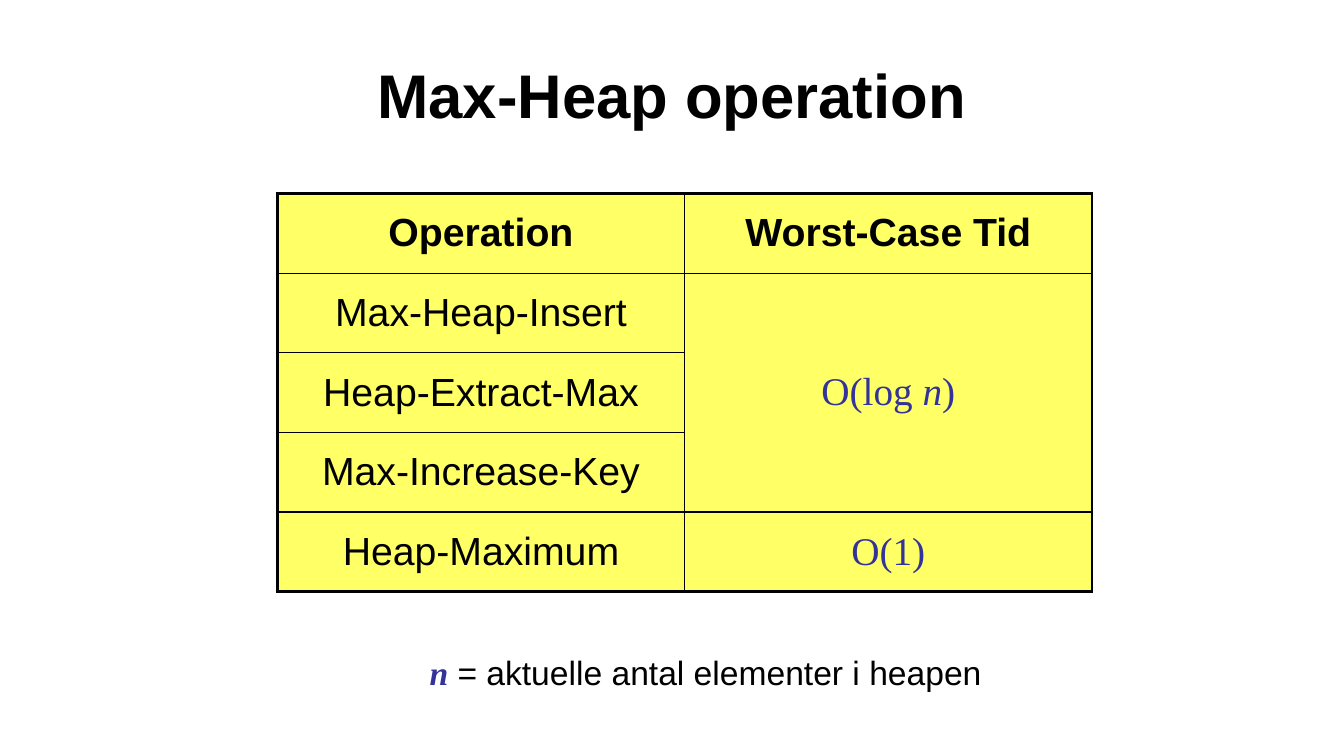
"""Build a slide tabulating the worst-case times of max-heap operations."""
from lxml.etree import SubElement
from pptx import Presentation
from pptx.dml.color import RGBColor
from pptx.enum.text import MSO_ANCHOR, PP_ALIGN
from pptx.oxml.ns import qn
from pptx.util import Inches, Pt

COLORS = {"ink": "000000", "math": "333399", "cell": "FFFF66"}
WIDTH, HEIGHT = Inches(13.33), Inches(7.5)
THIN, THICK = 1, 2.25
PLAIN = {"font": "Arial", "color": "ink"}
HEADING = {**PLAIN, "bold": True}
MATH = {"font": "Times New Roman", "color": "math"}
VARIABLE = {**MATH, "italic": True}

ROWS = [
    [[("Operation", HEADING)], [("Worst-Case Tid", HEADING)]],
    [[("Max-Heap-Insert", PLAIN)], [("O(log ", MATH), ("n", VARIABLE), (")", MATH)]],
    [[("Heap-Extract-Max", PLAIN)], []],
    [[("Max-Increase-Key", PLAIN)], []],
    [[("Heap-Maximum", PLAIN)], [("O(1)", MATH)]],
]


def write(frame, spans, size):
    para = frame.paragraphs[0]
    para.alignment = PP_ALIGN.CENTER
    for text, style in spans:
        span = para.add_run()
        span.text = text
        span.font.size = Pt(size)
        span.font.name = style["font"]
        span.font.bold = style.get("bold", False)
        span.font.italic = style.get("italic", False)
        span.font.color.rgb = RGBColor.from_string(COLORS[style["color"]])


def add_text(page, left, top, width, height, spans, size, anchor):
    box = page.shapes.add_textbox(
        int(WIDTH * left), int(HEIGHT * top), int(WIDTH * width), int(HEIGHT * height))
    box.text_frame.word_wrap = True
    box.text_frame.vertical_anchor = anchor
    write(box.text_frame, spans, size)


def set_border(cell, side, weight):
    line = SubElement(cell._tc.get_or_add_tcPr(), qn(f"a:ln{side}"), w=str(Pt(weight)))
    fill = SubElement(line, qn("a:solidFill"))
    SubElement(fill, qn("a:srgbClr"), val=COLORS["ink"])


def style_cell(cell, row, column):
    edges = {"L": column == 0, "R": column == 1}
    if not cell.is_spanned:
        edges |= {"T": row == 0, "B": row == len(ROWS) - 1}
    for side, outer in edges.items():
        set_border(cell, side, THICK if outer else THIN)
    cell.fill.solid()
    cell.fill.fore_color.rgb = RGBColor.from_string(COLORS["cell"])
    cell.vertical_anchor = MSO_ANCHOR.MIDDLE


def add_operations(page):
    table = page.shapes.add_table(
        len(ROWS), 2, Inches(2.75), Inches(1.92), Inches(8.08), Inches(3.95)).table
    table.cell(1, 1).merge(table.cell(3, 1))
    for row, entries in enumerate(ROWS):
        for column, spans in enumerate(entries):
            cell = table.cell(row, column)
            style_cell(cell, row, column)
            write(cell.text_frame, spans, 28)


def main():
    deck = Presentation()
    deck.slide_width, deck.slide_height = WIDTH, HEIGHT
    page = deck.slides.add_slide(deck.slide_layouts[6])
    add_text(page, 0.05, 0.04, 0.9, 0.167,
             [("Max-Heap operation", HEADING)], 44, MSO_ANCHOR.MIDDLE)
    add_operations(page)
    note = [("n", {**VARIABLE, "bold": True}),
            (" = aktuelle antal elementer i heapen", PLAIN)]
    add_text(page, 0.3, 0.856, 0.45, 0.067, note, 24, MSO_ANCHOR.TOP)
    deck.save("out.pptx")


if __name__ == "__main__":
    main()
